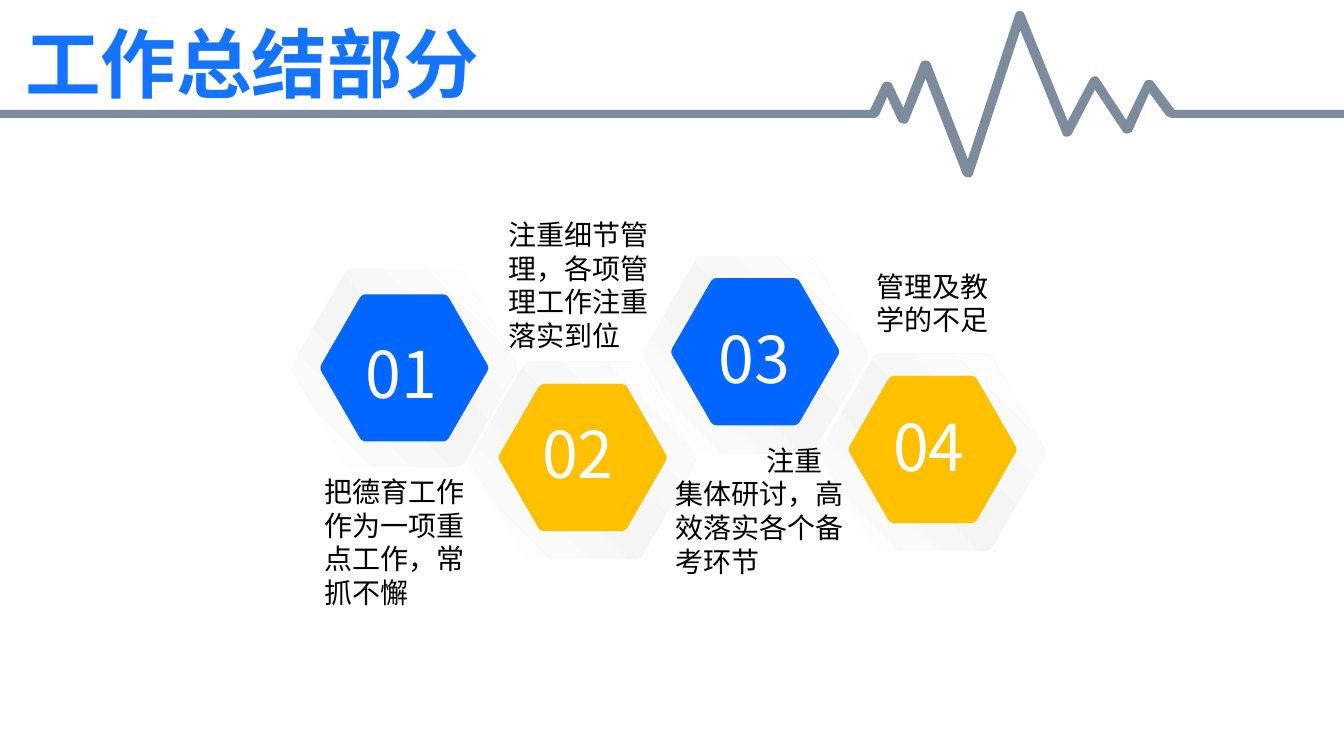
from copy import deepcopy
from math import cos, pi, sin, sqrt

from lxml.etree import SubElement
from pptx import Presentation
from pptx.dml.color import RGBColor
from pptx.enum.text import MSO_ANCHOR, MSO_AUTO_SIZE
from pptx.oxml.ns import qn
from pptx.util import Inches, Pt

FONT = "Noto Sans CJK SC"
BLUE, GOLD, WHITE, BLACK = "0066FF", "FFC000", "FFFFFF", "000000"


def add_outline(shapes, parts, color):
    """Draw a closed outline; a part is one point or the four points of a Bezier curve."""
    points = []
    for part in parts:
        if len(part) == 4:
            for i in range(9):
                t = i / 8
                weights = ((1 - t) ** 3, 3 * t * (1 - t) ** 2, 3 * t * t * (1 - t), t ** 3)
                points.append(tuple(sum(w * q[k] for w, q in zip(weights, part)) for k in (0, 1)))
        else:
            points.append(part)
    points = [(Inches(x), Inches(y)) for x, y in points]
    builder = shapes.build_freeform(*points[0])
    builder.add_line_segments(points[1:])
    sp = builder.convert_to_shape()
    sp.shadow.inherit = False
    sp.line.fill.background()
    sp.fill.solid()
    sp.fill.fore_color.rgb = RGBColor.from_string(color)
    return sp


def add_text(shapes, text, box, size, color):
    tb = shapes.add_textbox(*map(Inches, box))
    tf = tb.text_frame
    tf.word_wrap = True
    tf.auto_size = MSO_AUTO_SIZE.SHAPE_TO_FIT_TEXT
    p = tf.paragraphs[0]
    p.text = text
    p.font.size = Pt(size)
    p.font.name = FONT
    p.font.color.rgb = RGBColor.from_string(color)
    SubElement(p._p.pPr.find(qn("a:defRPr")), qn("a:ea"), typeface=FONT)
    return tf


prs = Presentation()
prs.slide_width, prs.slide_height = Inches(13.33), Inches(7.5)
s = prs.slides.add_slide(prs.slide_layouts[6])

# Heartbeat line: upper edge to the right, then lower edge back
heartbeat = [
    (0, 1.09), (8.63, 1.09),
    ((8.75, 0.84), (8.77, 0.8), (8.83, 0.8), (8.85, 0.84)), (8.96, 1.07),
    ((9.13, 0.63), (9.15, 0.59), (9.21, 0.59), (9.23, 0.63)), (9.6, 1.58),
    ((10.07, 0.14), (10.08, 0.1), (10.15, 0.1), (10.16, 0.14)), (10.59, 1.2),
    ((10.81, 0.79), (10.82, 0.76), (10.88, 0.74), (10.9, 0.78)), (11.17, 1.19),
    ((11.35, 0.82), (11.36, 0.79), (11.42, 0.78), (11.44, 0.81)), (11.65, 1.09),
    (13.33, 1.09), (13.33, 1.17), (11.62, 1.17), (11.57, 1.15), (11.4, 0.92),
    ((11.23, 1.3), (11.22, 1.32), (11.16, 1.34), (11.14, 1.31)), (10.86, 0.89),
    ((10.63, 1.33), (10.61, 1.36), (10.55, 1.37), (10.54, 1.33)), (10.12, 0.3),
    ((9.65, 1.73), (9.64, 1.77), (9.57, 1.77), (9.55, 1.73)), (9.18, 0.78),
    ((9.01, 1.2), (9, 1.24), (8.93, 1.23), (8.91, 1.2)), (8.8, 0.96),
    ((8.72, 1.14), (8.71, 1.15), (8.69, 1.17), (8.67, 1.17)), (0, 1.17),
]
add_outline(s.shapes, heartbeat, "7C8C9C")

# Numbered hexagons: centre x, rim centre y, core centre y, colour, number box
badges = [
    ("03", 7.49, 3.52, 3.49, BLUE, (7.03, 3.12, 1.09, 0.88)),
    ("01", 4.01, 3.65, 3.65, BLUE, (3.53, 3.27, 1.22, 0.88)),
    ("02", 5.78, 4.57, 4.54, GOLD, (5.28, 4.06, 1.08, 0.88)),
    ("04", 9.25, 4.49, 4.46, GOLD, (8.76, 3.99, 1.3, 0.88)),
]
for number, cx, rim_y, core_y, color, box in badges:
    shapes = s.shapes.add_group_shape().shapes
    layers = [(1.98, rim_y, WHITE), (1.96, rim_y, WHITE), (1.46, core_y, color)]
    for level, (height, cy, fill) in enumerate(layers):
        radius = height / sqrt(3)
        corners = [(cx + radius * cos(i * pi / 3), cy + radius * sin(i * pi / 3))
                   for i in range(6)]
        hexagon = []
        for i, (x, y) in enumerate(corners):
            before, after = corners[i - 1], corners[(i + 1) % 6]
            hexagon.append([(x + f * (n[0] - x), y + f * (n[1] - y))
                            for n, f in ((before, 0.05), (before, 0.02),
                                         (after, 0.02), (after, 0.05))])
        sp = add_outline(shapes, hexagon, fill)
        if level == 1:
            sp.fill.gradient()
            sp.fill.gradient_angle = 45
            first = sp.fill.gradient_stops[0]._gs
            first.addnext(deepcopy(first))
            stops = zip(sp.fill.gradient_stops, (0, 0.47, 1), (WHITE, "F5F5F5", WHITE))
            for stop, position, shade in stops:
                stop.position = position
                stop.color.rgb = RGBColor.from_string(shade)
    add_text(shapes, number, box, 46, WHITE)

captions = [
    ("把德育工作作为一项重点工作，常抓不懈", (3.12, 4.66, 1.8, 1.45)),
    ("注重细节管理，各项管理工作注重落实到位", (4.94, 2.11, 1.85, 1.45)),
    ("管理及教学的不足", (8.59, 2.62, 1.35, 0.77)),
]
for text, box in captions:
    add_text(s.shapes, text, box, 20, BLACK)

title = add_text(s.shapes, "工作总结部分", (0.15, 0.12, 8.96, 1.01), 54, "1574FF")
title.paragraphs[0].font.bold = True

research = add_text(s.shapes, "注重集体研讨，高效落实各个备考环节",
                    (6.6, 4.34, 1.92, 1.45), 20, BLACK)
research.vertical_anchor = MSO_ANCHOR.MIDDLE
research.paragraphs[0]._p.pPr.set("indent", str(Inches(0.9)))

prs.save("out.pptx")
